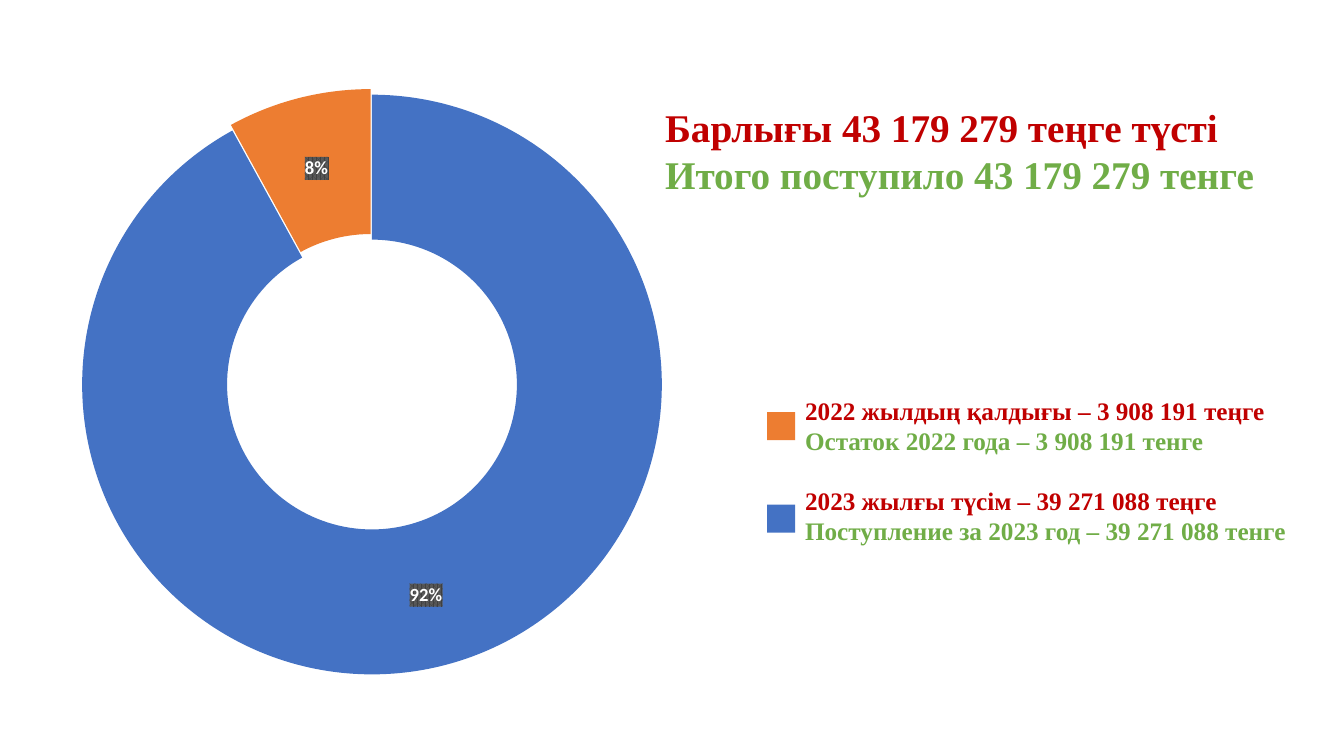
import pptx
import pptx.chart.data
import pptx.dml.color
import pptx.enum.chart
import pptx.enum.shapes
import pptx.oxml
import pptx.oxml.ns
import pptx.util

Pt = pptx.util.Pt
RGB = pptx.dml.color.RGBColor
RED = RGB(0xC0, 0x00, 0x00)
GREEN = RGB(0x70, 0xAD, 0x47)
BLUE = RGB(0x44, 0x72, 0xC4)
ORANGE = RGB(0xED, 0x7D, 0x31)
WHITE = RGB(0xFF, 0xFF, 0xFF)
BLACK = RGB(0x00, 0x00, 0x00)
SERIF = "Times New Roman"
SANS = "Calibri"

TOTAL = ("Барлығы 43 179 279 теңге түсті", "Итого поступило 43 179 279 тенге")
ITEMS = [
    (ORANGE, "2022 жылдың қалдығы – 3 908 191 теңге",
     "Остаток 2022 года – 3 908 191 тенге"),
    (BLUE, "2023 жылғы түсім – 39 271 088 теңге",
     "Поступление за 2023 год – 39 271 088 тенге"),
]
SHARES = [(92, BLUE), (8, ORANGE)]
LABEL_FILL = """<c:spPr {}><a:pattFill prst="pct75">
<a:fgClr><a:srgbClr val="404040"/></a:fgClr>
<a:bgClr><a:srgbClr val="595959"/></a:bgClr>
</a:pattFill><a:ln><a:noFill/></a:ln></c:spPr>"""
LAYOUT = """<c:layout {}><c:manualLayout><c:layoutTarget val="inner"/>
<c:xMode val="edge"/><c:yMode val="edge"/>
<c:x val="0.173"/><c:y val="0.014"/><c:w val="0.654"/><c:h val="0.986"/>
</c:manualLayout></c:layout>"""


def make_xml(text):
    return pptx.oxml.parse_xml(text.format(pptx.oxml.ns.nsdecls("c", "a")))


def set_font(font, name, size, color, bold):
    font.name = name
    font.size = Pt(size)
    font.bold = bold
    font.color.rgb = color


def add_text(shapes, box, pairs, size, gap=0):
    frame = shapes.add_textbox(*map(Pt, box)).text_frame
    frame.word_wrap = True
    for row, pair in enumerate(pairs):
        for col, (words, color) in enumerate(zip(pair, (RED, GREEN))):
            first = row == col == 0
            para = frame.paragraphs[0] if first else frame.add_paragraph()
            if row and not col:
                para.space_before = Pt(gap)
            run = para.add_run()
            run.text = words
            set_font(run.font, SERIF, size, color, True)


def add_ring(slide, box):
    data = pptx.chart.data.CategoryChartData()
    data.categories = ["1", "2"]
    data.add_series("Series 1", [share for share, _ in SHARES])
    kind = pptx.enum.chart.XL_CHART_TYPE.DOUGHNUT
    chart = slide.shapes.add_chart(kind, *map(Pt, box), data).chart
    chart.has_legend = False
    chart.has_title = False
    set_font(chart.font, SANS, 10, BLACK, False)

    plot = chart.plots[0]
    plot.vary_by_categories = True
    ring = plot.series[0]
    for index, (_, color) in enumerate(SHARES):
        part = ring.points[index].format
        part.fill.solid()
        part.fill.fore_color.rgb = color
        part.line.fill.background()
    tag = pptx.oxml.ns.qn
    ring._element.find(tag("c:tx")).addnext(
        make_xml('<c:explosion {} val="2"/>'))

    labels = ring.data_labels
    labels.show_percentage = True
    labels.show_value = False
    labels.number_format = "0%"
    labels.number_format_is_linked = False
    set_font(labels.font, SANS, 13.3, WHITE, True)
    labels._element.find(tag("c:numFmt")).addnext(make_xml(LABEL_FILL))

    area = chart._chartSpace.chart.plotArea
    for old in area.findall(tag("c:layout")):
        area.remove(old)
    area.insert(0, make_xml(LAYOUT))


def add_key(slide, box):
    left, top, width, height = box
    side, step = 20, 66
    shapes = slide.shapes.add_group_shape().shapes
    add_text(shapes, (left + side, top, width - side, height),
             [item[1:] for item in ITEMS], 18, 21.5)
    for index, (color, *_) in enumerate(ITEMS):
        mark = shapes.add_shape(
            pptx.enum.shapes.MSO_SHAPE.RECTANGLE, Pt(left),
            Pt(top + 16 + index * step), Pt(side), Pt(side))
        mark.shadow.inherit = False
        mark.fill.solid()
        mark.fill.fore_color.rgb = color
        mark.line.fill.background()


def main():
    deck = pptx.Presentation()
    deck.slide_width = Pt(960)
    deck.slide_height = Pt(540)
    slide = deck.slides.add_slide(deck.slide_layouts[6])
    add_text(slide.shapes, (468, 70, 461.5, 75), [TOTAL], 28)
    add_ring(slide, (-54.5, 56, 639.5, 427.5))
    add_key(slide, (548, 278.5, 388.5, 138))
    deck.save("out.pptx")


if __name__ == "__main__":
    main()
